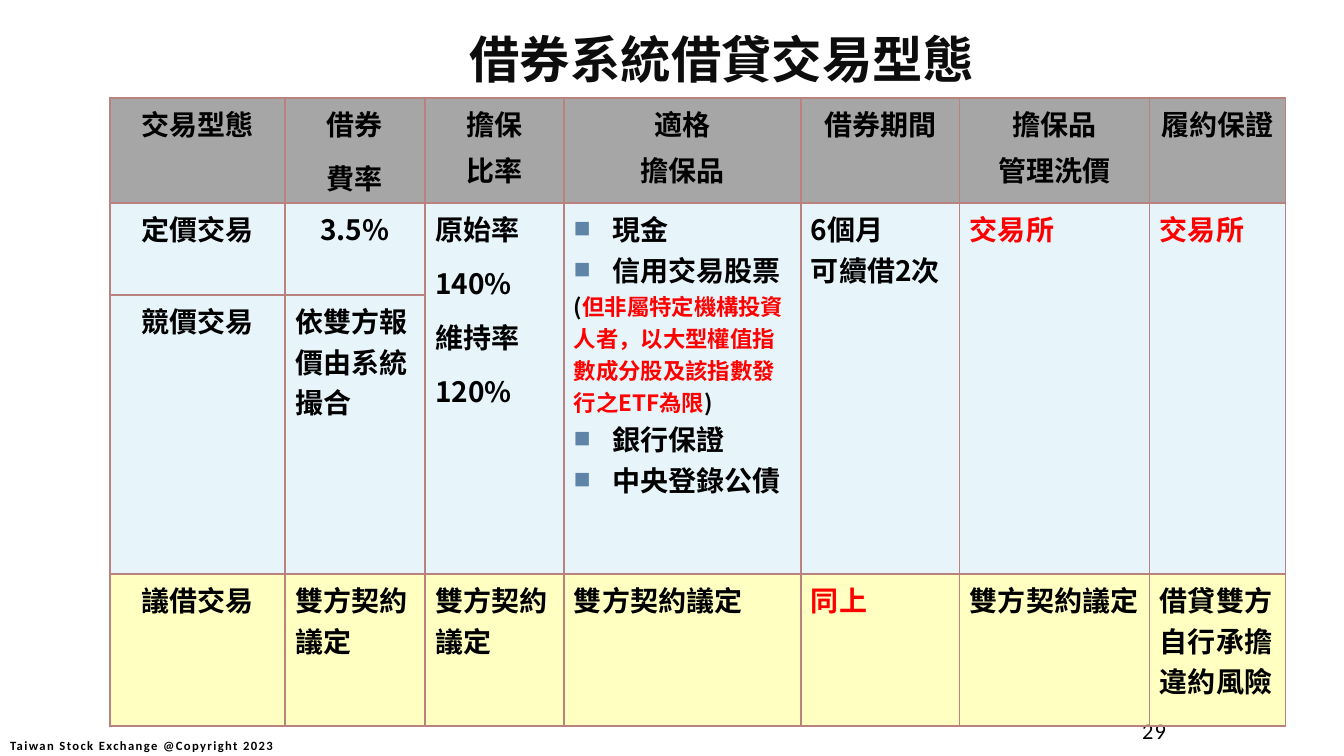
from lxml import etree
from pptx import Presentation, util as u
from pptx.dml.color import RGBColor
from pptx.enum import text as t
from pptx.oxml import ns

SANS, LATIN = "Noto Sans CJK SC", "Calibri"
BLACK, RED = "000000", "FF0000"
GREY, BLUE, YELLOW = ("A6A6A6", 100), ("1594C6", 10), ("FFFF66", 40)
MID, LEFT, RIGHT = t.PP_ALIGN.CENTER, t.PP_ALIGN.LEFT, t.PP_ALIGN.RIGHT
COLS = [175, 140, 139, 237, 159, 190, 136]
ROWS = [105, 92, 279, 152]
WIDE, NARROW = 9.5, 4  # gaps between paragraphs, in points

HEAD = ["交易型態", "借券\n費率", "擔保\n比率", "適格\n擔保品", "借券期間",
        "擔保品\n管理洗價", "履約保證"]
FIXED = ["定價交易", "3.5%", "原始率\n140%\n維持率\n120%", "",
         "6個月\n可續借2次", "交易所", "交易所"]
BID = ["競價交易", "依雙方報價由系統撮合"]
DEAL = ["議借交易"] + ["雙方契約議定"] * 3 + [
    "同上", "雙方契約議定", "借貸雙方自行承擔違約風險"]
BEFORE = ["現金", "信用交易股票"]
AFTER = ["銀行保證", "中央登錄公債"]
LIMIT = "但非屬特定機構投資人者，以大型權值指數成分股及該指數發行之ETF為限"


def px(n):
    return u.Emu(round(n * 914400 / 100.8))


def rgb(code):
    return RGBColor.from_string(code)


def sub(parent, tag, **attrs):
    return etree.SubElement(parent, ns.qn(tag), attrs)


def style(run, size, color=BLACK, bold=True, face=SANS, track=0):
    font = run.font
    font.size, font.bold, font.name = u.Pt(size), bold, face
    font.color.rgb = rgb(color)
    props = run._r.get_or_add_rPr()
    sub(props, "a:ea", typeface=face)
    if track:
        props.set("spc", str(track))


def label(slide, box, words, align, anchor, **look):
    frame = slide.shapes.add_textbox(*map(px, box)).text_frame
    frame.word_wrap = True
    frame.vertical_anchor = anchor
    para = frame.paragraphs[0]
    para.text, para.alignment = words, align
    style(para.runs[0], **look)


def paint(cell, color, alpha):
    """Fill a cell with a tint and rule all four of its sides."""
    cell.fill.solid()
    cell.fill.fore_color.rgb = rgb(color)
    props = cell._tc.tcPr
    if alpha < 100:
        tone = props.find(".//" + ns.qn("a:srgbClr"))
        sub(tone, "a:alpha", val=str(alpha * 1000))
    for i, side in enumerate("LRTB"):
        line = etree.Element(ns.qn("a:ln" + side), w="12700")
        sub(sub(line, "a:solidFill"), "a:srgbClr", val="BA827F")
        props.insert(i, line)


def write(cell, words, align, gap, color):
    frame = cell.text_frame
    frame.text = words
    for i, para in enumerate(frame.paragraphs):
        para.alignment = align
        if i and gap:
            para.space_before = u.Pt(gap)
        for run in para.runs:
            style(run, 20, color)


def bullet(para):
    props = para._p.get_or_add_pPr()
    props.set("marL", str(px(38)))
    props.set("indent", str(-px(38)))
    sub(sub(props, "a:buClr"), "a:srgbClr", val="5E85A8")
    sub(props, "a:buSzPct", val="60000")
    sub(props, "a:buFont", typeface=SANS)
    sub(props, "a:buChar", char="■")


def assets(cell):
    """List the eligible collateral, with its limit in red."""
    frame = cell.text_frame
    frame.text = "\n".join(BEFORE + [""] + AFTER)
    for para in frame.paragraphs:
        if para.runs:
            bullet(para)
            style(para.runs[0], 20)
        else:
            for words, color in [("(", BLACK), (LIMIT, RED), (")", BLACK)]:
                run = para.add_run()
                run.text = words
                style(run, 16, color)


def grid(slide, left, top):
    table = slide.shapes.add_table(
        len(ROWS), len(COLS), px(left), px(top),
        px(sum(COLS)), px(sum(ROWS))).table
    table.first_row = table.horz_banding = False
    for col, width in zip(table.columns, COLS):
        col.width = px(width)
    for row, height in zip(table.rows, ROWS):
        row.height = px(height)
    for row, tint in zip(table.rows, [GREY, BLUE, BLUE, YELLOW]):
        for cell in row.cells:
            paint(cell, *tint)
    for c in range(len(BID), len(COLS)):
        table.cell(1, c).merge(table.cell(2, c))
    for r, row in enumerate([HEAD, FIXED, BID, DEAL]):
        for c, words in enumerate(row):
            if not words:
                continue
            mid = r == 0 or c == 0 or (r, c) == (1, 1)
            gap = WIDE if c in (1, 2) and (r, c) != (0, 2) else NARROW
            if c == 4:
                gap = 0
            red = words in ("交易所", "同上")
            write(table.cell(r, c), words, MID if mid else LEFT, gap,
                  RED if red else BLACK)
    assets(table.cell(1, 3))


def main():
    deck = Presentation()
    deck.slide_width, deck.slide_height = px(1344), px(756)
    slide = deck.slides.add_slide(deck.slide_layouts[6])
    top, middle = t.MSO_ANCHOR.TOP, t.MSO_ANCHOR.MIDDLE
    label(slide, (-14, 726, 311, 40), "Taiwan Stock Exchange @Copyright 2023",
          MID, middle, size=9, face=LATIN, track=100)
    label(slide, (966, 706, 210, 50), "29", RIGHT, middle,
          size=16, bold=False, face=LATIN, track=100)
    label(slide, (167, 23, 1109, 80), "借券系統借貸交易型態", MID, top,
          size=36, color="0D0D0D")
    grid(slide, 110, 98)
    deck.save("out.pptx")


if __name__ == "__main__":
    main()
